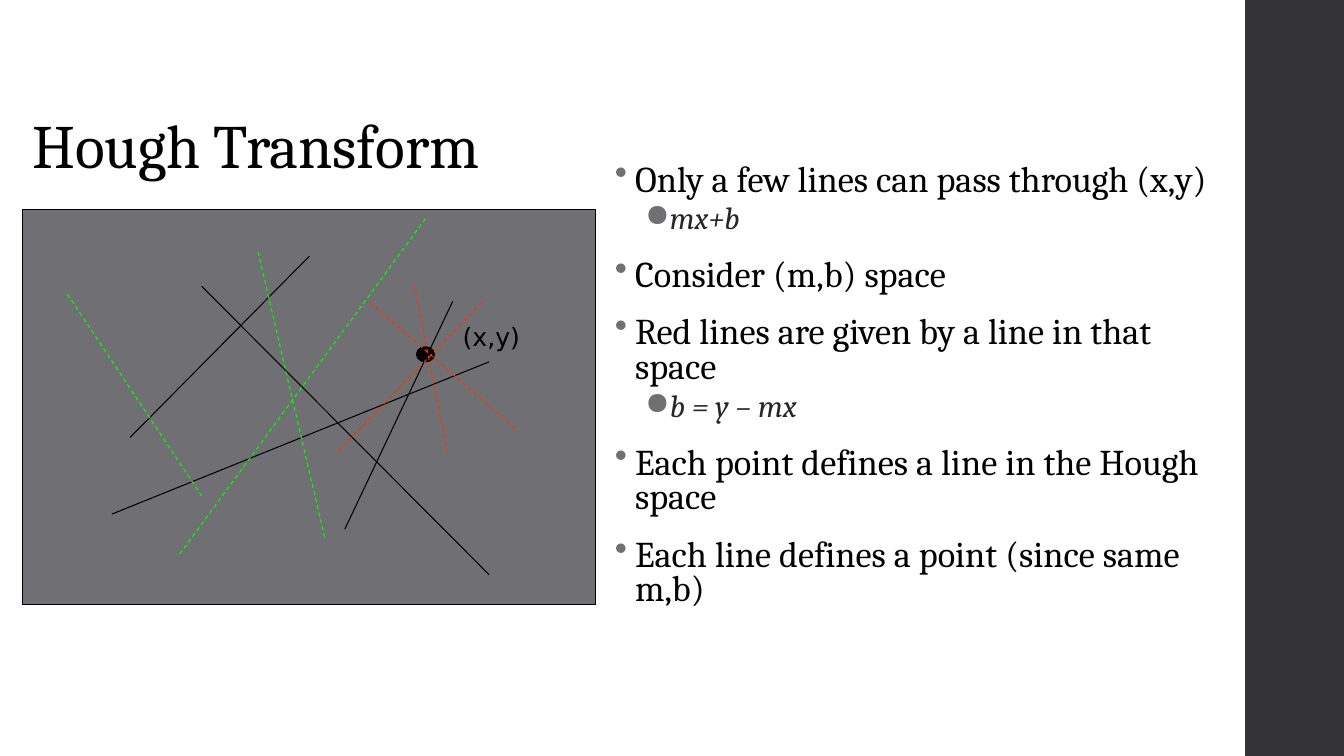
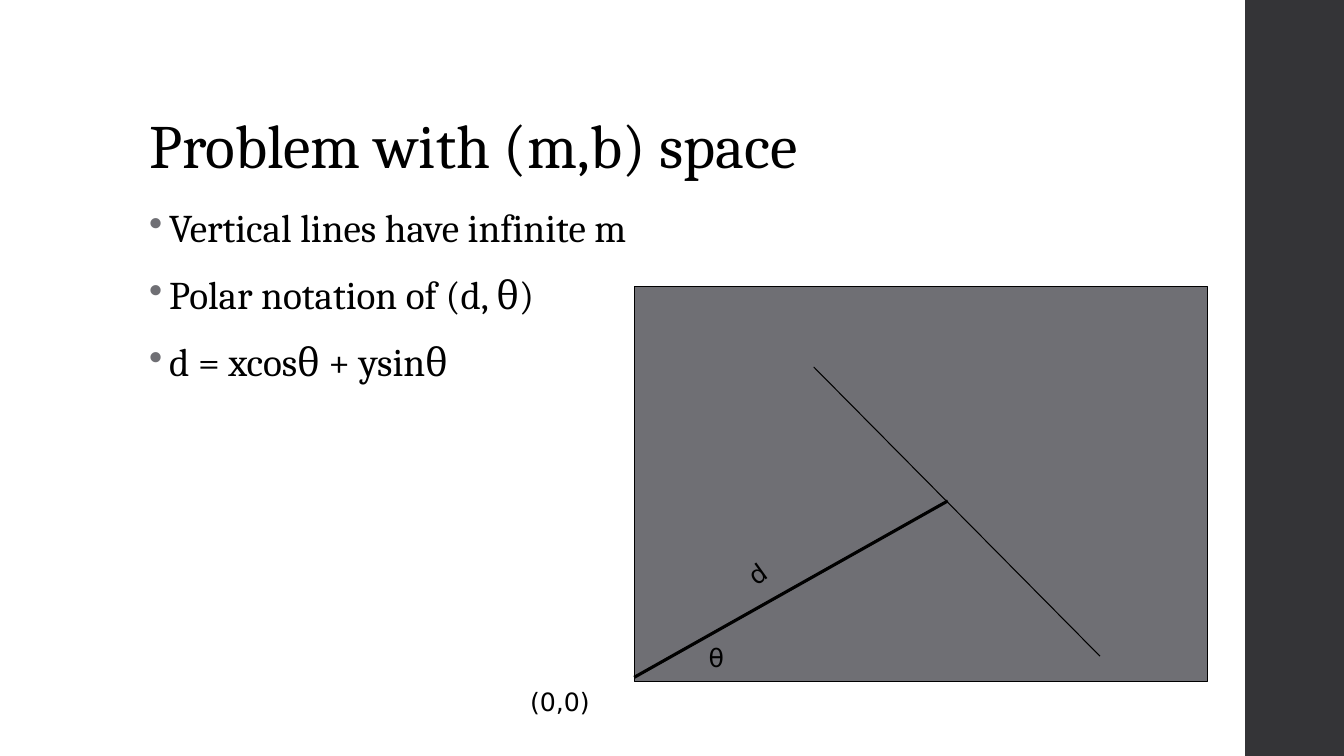
from dataclasses import dataclass

from lxml.etree import SubElement
from pptx import Presentation
from pptx.dml.color import RGBColor
from pptx.enum.dml import MSO_LINE
from pptx.enum.shapes import MSO_CONNECTOR, MSO_SHAPE
from pptx.enum.text import MSO_ANCHOR, MSO_AUTO_SIZE, PP_ALIGN
from pptx.oxml.ns import qn
from pptx.util import Inches, Pt


@dataclass(frozen=True)
class Theme:
    ink: str = "000000"
    soft_ink: str = "262626"
    band: str = "343437"
    panel: str = "6F6F74"
    red: str = "FF3300"
    green: str = "00FF00"
    text_font: str = "Cambria"
    label_font: str = "DejaVu Sans"
    title_size: float = 44
    label_size: float = 18
    thin: float = 0.75
    thick: float = 2.25


THEME = Theme()
TITLE_ONLY = 5
PANEL_SIZE = (5.69, 3.92)


def inches(*lengths):
    return [Inches(length) for length in lengths]


def apply(target, **values):
    for name, value in values.items():
        setattr(target, name, value)


def style_font(font, name, size, color, italic=False):
    apply(font, name=name, size=Pt(size), italic=italic)
    font.color.rgb = RGBColor.from_string(color)


def add_bullet(paragraph, symbol, indent):
    """Give the paragraph a hanging bullet; call after its spacing is set."""
    properties = paragraph._p.get_or_add_pPr()
    properties.set("marL", str(Inches(indent)))
    properties.set("indent", str(Inches(-0.2)))
    bullet_color = SubElement(properties, qn("a:buClr"))
    SubElement(bullet_color, qn("a:srgbClr"), val=THEME.panel)
    SubElement(properties, qn("a:buChar"), char=symbol)


class Deck:
    def __init__(self):
        self.presentation = Presentation()
        apply(self.presentation, slide_width=Inches(13.33), slide_height=Inches(7.5))
        self.slide = None

    def new_slide(self, title, left):
        layout = self.presentation.slide_layouts[TITLE_ONLY]
        self.slide = self.presentation.slides.add_slide(layout)
        self.block(MSO_SHAPE.RECTANGLE, (12.35, 0, 1, 7.5), THEME.band, outlined=False)
        heading = self.slide.shapes.title
        x, y, width, height = inches(left, 0.4, 10.6, 1.45)
        apply(heading, left=x, top=y, width=width, height=height)
        frame = heading.text_frame
        apply(frame, text=title, vertical_anchor=MSO_ANCHOR.BOTTOM,
              word_wrap=True, auto_size=MSO_AUTO_SIZE.NONE)
        paragraph = frame.paragraphs[0]
        apply(paragraph, alignment=PP_ALIGN.LEFT, line_spacing=0.9)
        style_font(paragraph.runs[0].font, THEME.text_font, THEME.title_size, THEME.ink)

    def group(self):
        return self.slide.shapes.add_group_shape().shapes

    def block(self, preset, box, color, outlined=True, group=None):
        shapes = self.slide.shapes if group is None else group
        block = shapes.add_shape(preset, *inches(*box))
        block.shadow.inherit = False
        block.fill.solid()
        block.fill.fore_color.rgb = RGBColor.from_string(color)
        if outlined:
            block.line.color.rgb = RGBColor.from_string(THEME.ink)
            block.line.width = Pt(THEME.thin)
        else:
            block.line.fill.background()

    def panel(self, left, top, group=None):
        self.block(MSO_SHAPE.RECTANGLE, (left, top, *PANEL_SIZE), THEME.panel, group=group)

    def line(self, start, end, color=THEME.ink, width=THEME.thin, dash=None, group=None):
        shapes = self.slide.shapes if group is None else group
        line = shapes.add_connector(MSO_CONNECTOR.STRAIGHT, *inches(*start, *end))
        line.line.color.rgb = RGBColor.from_string(color)
        apply(line.line, width=Pt(width), dash_style=dash)
        SubElement(line._element.spPr, qn("a:effectLst"))

    def lines(self, ends, group, **style):
        for start, end in ends:
            self.line(start, end, group=group, **style)

    def label(self, text, box, rotation=0, group=None):
        shapes = self.slide.shapes if group is None else group
        label = shapes.add_textbox(*inches(*box))
        label.rotation = rotation
        apply(label.text_frame, text=text, word_wrap=False)
        run = label.text_frame.paragraphs[0].runs[0]
        style_font(run.font, THEME.label_font, THEME.label_size, THEME.ink)

    def bullets(self, items, box, sizes, line_spacing):
        """Write (level, text) items; sizes holds one type size per level."""
        frame = self.slide.shapes.add_textbox(*inches(*box)).text_frame
        frame.word_wrap = True
        previous_level = None
        for level, text in items:
            if previous_level is None:
                paragraph, gap = frame.paragraphs[0], 0
            else:
                paragraph = frame.add_paragraph()
                gap = 5 if level else 16 + previous_level
            apply(paragraph, level=level, line_spacing=line_spacing, space_before=Pt(gap))
            add_bullet(paragraph, "●" if level else "•", 0.5 if level else 0.2)
            run = paragraph.add_run()
            run.text = text
            style_font(run.font, THEME.text_font, sizes[level],
                       THEME.soft_ink if level else THEME.ink, italic=level > 0)
            previous_level = level


def hough_transform(deck):
    deck.new_slide("Hough Transform", 0.22)
    deck.bullets(
        [(0, "Only a few lines can pass through (x,y)"),
         (1, "mx+b"),
         (0, "Consider (m,b) space"),
         (0, "Red lines are given by a line in that space"),
         (1, "b = y – mx"),
         (0, "Each point defines a line in the Hough space"),
         (0, "Each line defines a point (since same m,b)")],
        (6, 1.58, 6.18, 5.17), sizes=(25.9, 22.2), line_spacing=0.8)

    plane = deck.group()
    deck.panel(0.22, 2.08, group=plane)
    deck.lines([((1.11, 5.1), (4.85, 3.59)),
                ((2, 2.84), (4.85, 5.7)),
                ((1.29, 4.34), (3.07, 2.54)),
                ((4.49, 2.99), (3.42, 5.25))], plane)
    deck.block(MSO_SHAPE.OVAL, (4.13, 3.44, 0.18, 0.15), THEME.ink, group=plane)
    deck.label("(x,y)", (4.49, 3.14, 0.82, 0.4), group=plane)

    through_point = [((3.67, 3), (5.11, 4.25)),
                     ((4.11, 2.83), (4.44, 4.5)),
                     ((4.78, 3), (3.33, 4.5))]
    elsewhere = [((2.56, 2.5), (3.22, 5.33)),
                 ((0.67, 2.92), (2, 4.92)),
                 ((4.22, 2.17), (1.78, 5.5))]
    for ends, color in ((through_point, THEME.red), (elsewhere, THEME.green)):
        deck.lines(ends, deck.group(), color=color, dash=MSO_LINE.DASH)


def polar_notation(deck):
    deck.new_slide("Problem with (m,b) space", 1.38)
    deck.bullets(
        [(0, "Vertical lines have infinite m"),
         (0, "Polar notation of (d, θ)"),
         (0, "d = xcosθ + ysinθ")],
        (1.38, 2, 9.4, 4.76), sizes=(28,), line_spacing=0.95)
    deck.panel(6.29, 2.84)
    deck.line((8.07, 3.64), (10.91, 6.51))
    deck.line((6.29, 6.72), (9.4, 4.97), width=THEME.thick)
    deck.label("(0,0)", (5.16, 6.76, 0.84, 0.4))
    deck.label("d", (7.33, 5.49, 0.36, 0.4), rotation=324.4)
    deck.label("θ", (6.93, 6.32, 0.36, 0.4))


def main():
    deck = Deck()
    hough_transform(deck)
    polar_notation(deck)
    deck.presentation.save("out.pptx")


if __name__ == "__main__":
    main()
